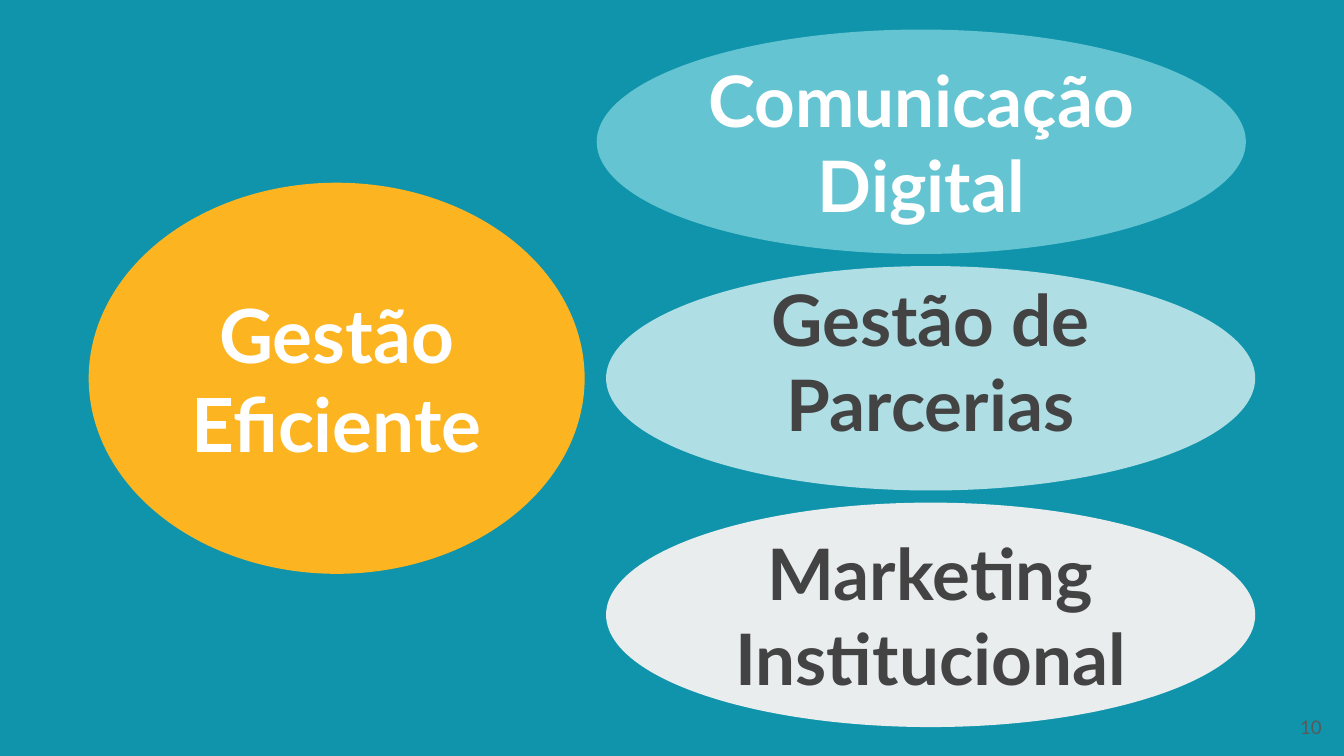
import pptx
import pptx.dml.color
import pptx.enum.shapes
import pptx.enum.text
import pptx.util

Pt = pptx.util.Pt
FONT = "Lato"
INSET = 7.2
WHITE, DARK = "FFFFFF", "434343"


def color(hex_value):
    return pptx.dml.color.RGBColor.from_string(hex_value)


def write_text(shape, text, size, text_color, bold, alignment, bottom_inset=INSET):
    frame = shape.text_frame
    frame.word_wrap = True
    frame.vertical_anchor = pptx.enum.text.MSO_ANCHOR.MIDDLE
    frame.margin_left = frame.margin_right = frame.margin_top = Pt(INSET)
    frame.margin_bottom = Pt(bottom_inset)
    frame.text = text
    paragraph = frame.paragraphs[0]
    paragraph.alignment = alignment
    font = paragraph.runs[0].font
    font.name, font.size, font.bold = FONT, Pt(size), bold
    font.color.rgb = color(text_color)


def add_ellipse(slide, box, text, fill, text_color, size, bottom_inset=INSET):
    shape = slide.shapes.add_shape(
        pptx.enum.shapes.MSO_SHAPE.OVAL, *(Pt(length) for length in box))
    shape.shadow.inherit = False
    shape.fill.solid()
    shape.fill.fore_color.rgb = color(fill)
    shape.line.fill.background()
    write_text(shape, text, size, text_color, True,
               pptx.enum.text.PP_ALIGN.CENTER, bottom_inset)


def add_topics(slide, box):
    """Stack the topic ellipses at an equal pitch; the first sits slightly left."""
    left, top, width, height = box
    ellipse_height, first_shift = 120.24, 5.04
    topics = [
        ("Comunicação Digital", "64C4D2", WHITE, -first_shift, INSET),
        ("Gestão de Parcerias", "AFDEE5", DARK, 0, INSET + 19.2),
        ("Marketing Institucional", "E9EDEE", DARK, 0, INSET),
    ]
    pitch = (height - ellipse_height) / (len(topics) - 1)
    for index, (text, fill, text_color, shift, bottom_inset) in enumerate(topics):
        ellipse_box = (left + shift, top + index * pitch, width, ellipse_height)
        add_ellipse(slide, ellipse_box, text, fill, text_color, 38, bottom_inset)


def add_page_number(slide, box, number):
    shape = slide.shapes.add_textbox(*(Pt(length) for length in box))
    write_text(shape, number, 10, "595959", False, pptx.enum.text.PP_ALIGN.RIGHT)


def main():
    presentation = pptx.Presentation()
    presentation.slide_width, presentation.slide_height = Pt(720), Pt(405)
    slide = presentation.slides.add_slide(presentation.slide_layouts[6])
    slide.background.fill.solid()
    slide.background.fill.fore_color.rgb = color("1094AB")

    add_topics(slide, (324.72, 15.84, 347.76, 373.68))
    add_ellipse(slide, (47.52, 97.92, 265.68, 209.52),
                "Gestão Eficiente", "FCB421", WHITE, 40)
    add_page_number(slide, (672, 374, 43.2, 31), "10")
    presentation.save("out.pptx")


if __name__ == "__main__":
    main()
